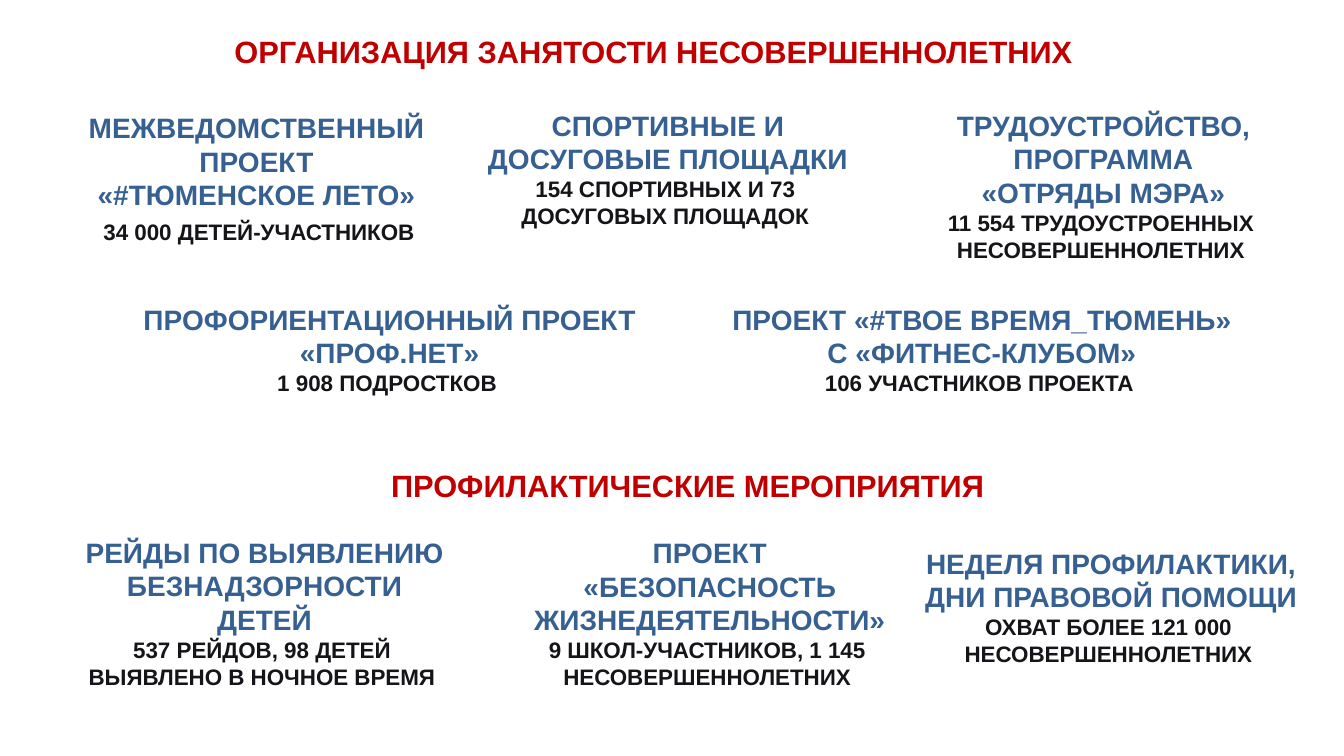
from dataclasses import dataclass

from pptx import Presentation
from pptx.dml.color import RGBColor
from pptx.enum.shapes import MSO_SHAPE as SHAPE
from pptx.enum.text import MSO_ANCHOR as ANCHOR, MSO_AUTO_SIZE as AUTO, PP_ALIGN as ALIGN
from pptx.util import Inches, Pt


@dataclass(frozen=True)
class Theme:
    font: str = "Arial"
    title: str = "C00000"
    heading: str = "376092"
    detail: str = "141419"
    card: str = "FFFFFF"
    title_size: float = 22
    heading_size: float = 20
    detail_size: float = 16
    spare_line: float = 12


THEME = Theme()

TITLE = ("ОРГАНИЗАЦИЯ ЗАНЯТОСТИ НЕСОВЕРШЕННОЛЕТНИХ", (2.03, 0.27, 8.9, 0.47))
SUBTITLE = ("ПРОФИЛАКТИЧЕСКИЕ МЕРОПРИЯТИЯ", (2.92, 4.58, 7.8, 0.47))

CARDS = [
    {"box": (0.48, 1.18, 4.03, 1.5), "spare": 2, "tight": True,
     "heading": ["МЕЖВЕДОМСТВЕННЫЙ ПРОЕКТ", "«#ТЮМЕНСКОЕ ЛЕТО»"],
     "detail": "34 000 ДЕТЕЙ-УЧАСТНИКОВ"},
    {"box": (4.51, 1.18, 4.03, 1.15), "spare": 1,
     "heading": ["СПОРТИВНЫЕ И ДОСУГОВЫЕ ПЛОЩАДКИ"],
     "detail": "154 СПОРТИВНЫХ И 73 ДОСУГОВЫХ ПЛОЩАДОК"},
    {"box": (8.76, 1.07, 4.17, 1.71), "spare": 1,
     "heading": ["ТРУДОУСТРОЙСТВО, ПРОГРАММА", "«ОТРЯДЫ МЭРА»"],
     "detail": "11 554 ТРУДОУСТРОЕННЫХ НЕСОВЕРШЕННОЛЕТНИХ"},
    {"box": (1.15, 3.03, 5.23, 1.04), "spare": 1,
     "heading": ["ПРОФОРИЕНТАЦИОННЫЙ ПРОЕКТ «ПРОФ.НЕТ»"],
     "detail": "1 908 ПОДРОСТКОВ"},
    {"box": (6.86, 3.03, 5.56, 1.04), "spare": 1,
     "heading": ["ПРОЕКТ «#ТВОЕ ВРЕМЯ_ТЮМЕНЬ»", "С «ФИТНЕС-КЛУБОМ»"],
     "detail": "106 УЧАСТНИКОВ ПРОЕКТА"},
    {"box": (0.51, 5.39, 4.03, 1.54), "spare": 1,
     "heading": ["РЕЙДЫ ПО ВЫЯВЛЕНИЮ БЕЗНАДЗОРНОСТИ ДЕТЕЙ"],
     "detail": "537 РЕЙДОВ, 98 ДЕТЕЙ ВЫЯВЛЕНО В НОЧНОЕ ВРЕМЯ"},
    {"box": (4.93, 5.39, 4.02, 1.38), "spare": 0,
     "heading": ["ПРОЕКТ «БЕЗОПАСНОСТЬ ЖИЗНЕДЕЯТЕЛЬНОСТИ»"],
     "detail": "9 ШКОЛ-УЧАСТНИКОВ, 1 145 НЕСОВЕРШЕННОЛЕТНИХ"},
    {"box": (8.81, 5.39, 4.22, 1.26), "spare": 0,
     "heading": ["НЕДЕЛЯ ПРОФИЛАКТИКИ, ДНИ ПРАВОВОЙ ПОМОЩИ"],
     "detail": "ОХВАТ БОЛЕЕ 121 000 НЕСОВЕРШЕННОЛЕТНИХ"},
]


def write(p, text, size, color, indent=0.0, line=None, before=0):
    p.alignment = ALIGN.CENTER
    p.space_before = Pt(before)
    if line:
        p.line_spacing = Pt(line)
    if indent:
        p._p.get_or_add_pPr().set("marL", str(Inches(indent)))
    r = p.add_run()
    r.text = text
    r.font.name = THEME.font
    r.font.size = Pt(size)
    r.font.bold = True
    r.font.color.rgb = RGBColor.from_string(color)


def set_title(sp, text, box):
    sp.left, sp.top, sp.width, sp.height = map(Inches, box)
    tf = sp.text_frame
    tf.word_wrap = True
    tf.auto_size = AUTO.NONE
    tf.vertical_anchor = ANCHOR.TOP
    write(tf.paragraphs[0], text, THEME.title_size, THEME.title)


def add_card(s, box, heading, detail, spare, tight=False):
    sp = s.shapes.add_shape(SHAPE.ROUNDED_RECTANGLE, *map(Inches, box))
    sp.adjustments[0] = 0.21
    sp.shadow.inherit = False
    sp.fill.solid()
    sp.fill.fore_color.rgb = RGBColor.from_string(THEME.card)
    sp.line.fill.background()
    tf = sp.text_frame
    tf.word_wrap = True
    tf.vertical_anchor = ANCHOR.MIDDLE
    tf.margin_left, tf.margin_right = Inches(0.1), 0
    tf.margin_top = Inches(0.05)
    tf.margin_bottom = Inches(0.05) + Pt(THEME.spare_line * spare)
    for i, text in enumerate(heading):
        p = tf.add_paragraph() if i else tf.paragraphs[0]
        write(p, text, THEME.heading_size, THEME.heading, indent=0 if tight else 0.1)
    gap = THEME.spare_line if tight else 0
    write(tf.add_paragraph(), detail, THEME.detail_size, THEME.detail,
          indent=0.05, line=gap or None, before=gap)


def main():
    prs = Presentation()
    prs.slide_width, prs.slide_height = Inches(13.33), Inches(7.5)
    s = prs.slides.add_slide(prs.slide_layouts[5])
    set_title(s.shapes.title, *TITLE)
    set_title(s.shapes.add_textbox(0, 0, 0, 0), *SUBTITLE)
    for card in CARDS:
        add_card(s, **card)
    prs.save("out.pptx")


if __name__ == "__main__":
    main()
